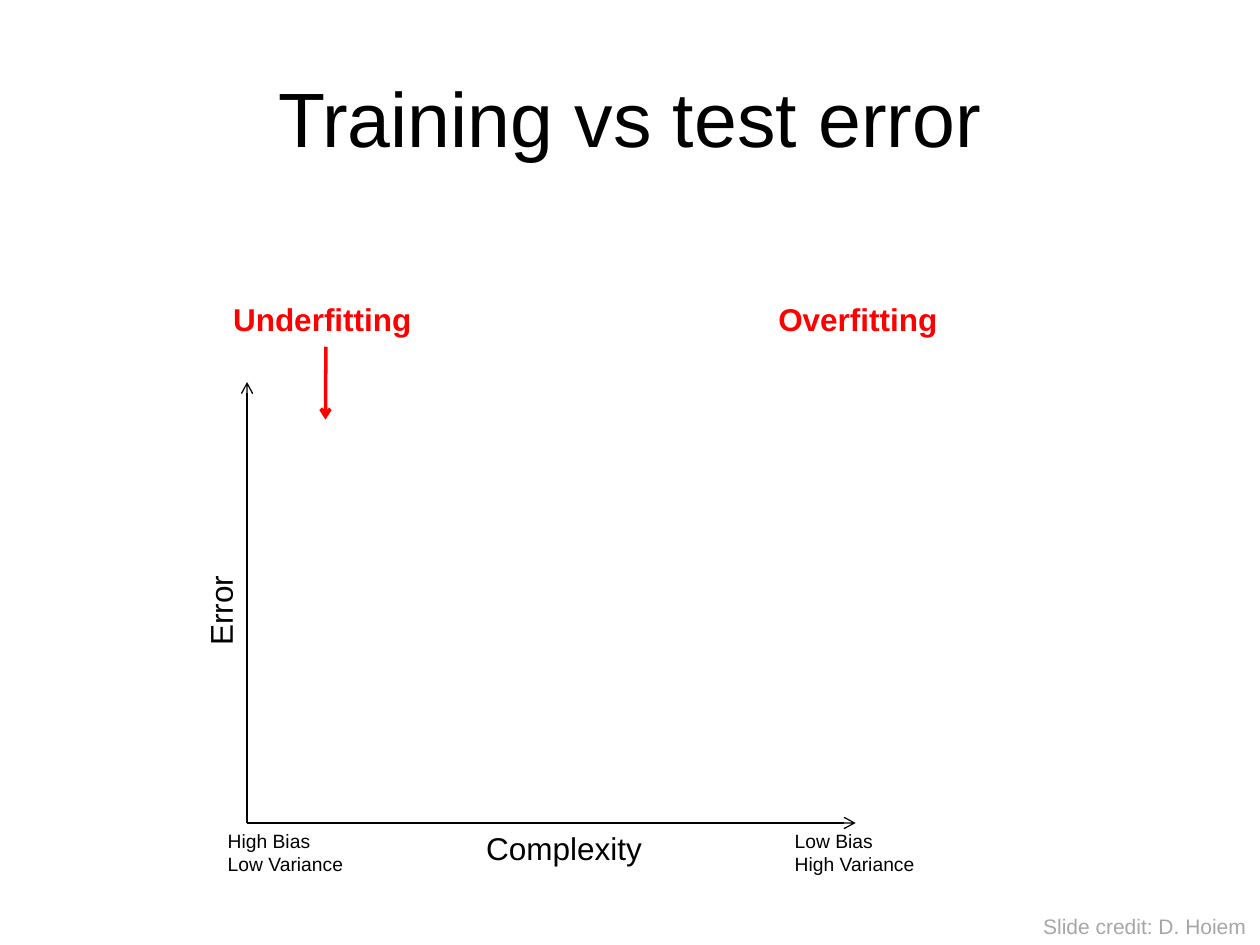
from lxml import etree
from pptx import Presentation
from pptx.dml.color import RGBColor
from pptx.enum import shapes, text
from pptx.oxml.ns import qn
from pptx.util import Cm, Pt

FONT = "Arial"
COLORS = {"ink": "000000", "alert": "FF0000", "credit": "A6A6A6"}
TITLE = "Training vs test error"

# Axes, in cm
ORIGIN_X, ORIGIN_Y = 4.98, 16.59
AXIS_TOP, AXIS_RIGHT = 7.7, 17.25
FIT_TOP = 5.92

# Text, left, top, width, height, size, colour, bold, rotation
LABELS = [
    ("Underfitting", 4.45, FIT_TOP, 4.14, 1.02, 18, "alert", True, 0),
    ("Overfitting", 15.44, FIT_TOP, 3.76, 1.02, 18, "alert", True, 0),
    ("Complexity", 9.55, ORIGIN_Y, 3.68, 1.02, 18, "ink", False, 0),
    ("Low Bias\nHigh Variance", 15.77, ORIGIN_Y, 2.97, 1.19, 11, "ink", False, 0),
    ("High Bias\nLow Variance", 4.34, ORIGIN_Y, 2.9, 1.19, 11, "ink", False, 0),
    ("Error", 3.48, 11.79, 1.93, 1.02, 18, "ink", False, 270),
    ("Slide credit: D. Hoiem", 20.78, 18.29, 4.62, 0.76, 12, "credit", False, 0),
]

# Start, end, colour, width
ARROWS = [
    ((6.57, 6.99), (6.56, 8.46), "alert", 2),
    ((ORIGIN_X, ORIGIN_Y), (ORIGIN_X, AXIS_TOP), "ink", 0.75),
    ((ORIGIN_X, ORIGIN_Y), (AXIS_RIGHT, ORIGIN_Y), "ink", 0.75),
]


def rgb(name):
    return RGBColor.from_string(COLORS[name])


def style(frame, size, color, bold=False):
    for para in frame.paragraphs:
        for span in para.runs:
            span.font.name = FONT
            span.font.size = Pt(size)
            span.font.bold = bold
            span.font.color.rgb = rgb(color)


def add_title(page):
    title = page.shapes.title
    title.left, title.top, title.width, title.height = map(Cm, (1.27, 0.76, 22.86, 3.18))
    frame = title.text_frame
    frame.text = TITLE
    frame.vertical_anchor = text.MSO_ANCHOR.MIDDLE
    frame.paragraphs[0].alignment = text.PP_ALIGN.CENTER
    style(frame, 44, "ink")


def add_label(page, words, left, top, width, height, size, color, bold, rotation):
    box = page.shapes.add_textbox(*map(Cm, (left, top, width, height)))
    box.rotation = rotation
    frame = box.text_frame
    frame.word_wrap = False
    frame.auto_size = text.MSO_AUTO_SIZE.SHAPE_TO_FIT_TEXT
    frame.text = words
    style(frame, size, color, bold)


def add_arrow(page, start, end, color, width):
    arrow = page.shapes.add_connector(
        shapes.MSO_CONNECTOR.STRAIGHT, *map(Cm, start + end))
    arrow.line.color.rgb = rgb(color)
    arrow.line.width = Pt(width)
    outline = arrow.line._get_or_add_ln()
    etree.SubElement(outline, qn("a:tailEnd"), type="arrow")
    etree.SubElement(arrow._element.spPr, qn("a:effectLst"))


def main():
    deck = Presentation()
    deck.slide_width, deck.slide_height = Cm(25.4), Cm(19.05)
    page = deck.slides.add_slide(deck.slide_layouts[5])
    add_title(page)
    for arrow in ARROWS:
        add_arrow(page, *arrow)
    for label in LABELS:
        add_label(page, *label)
    deck.save("out.pptx")


if __name__ == "__main__":
    main()
